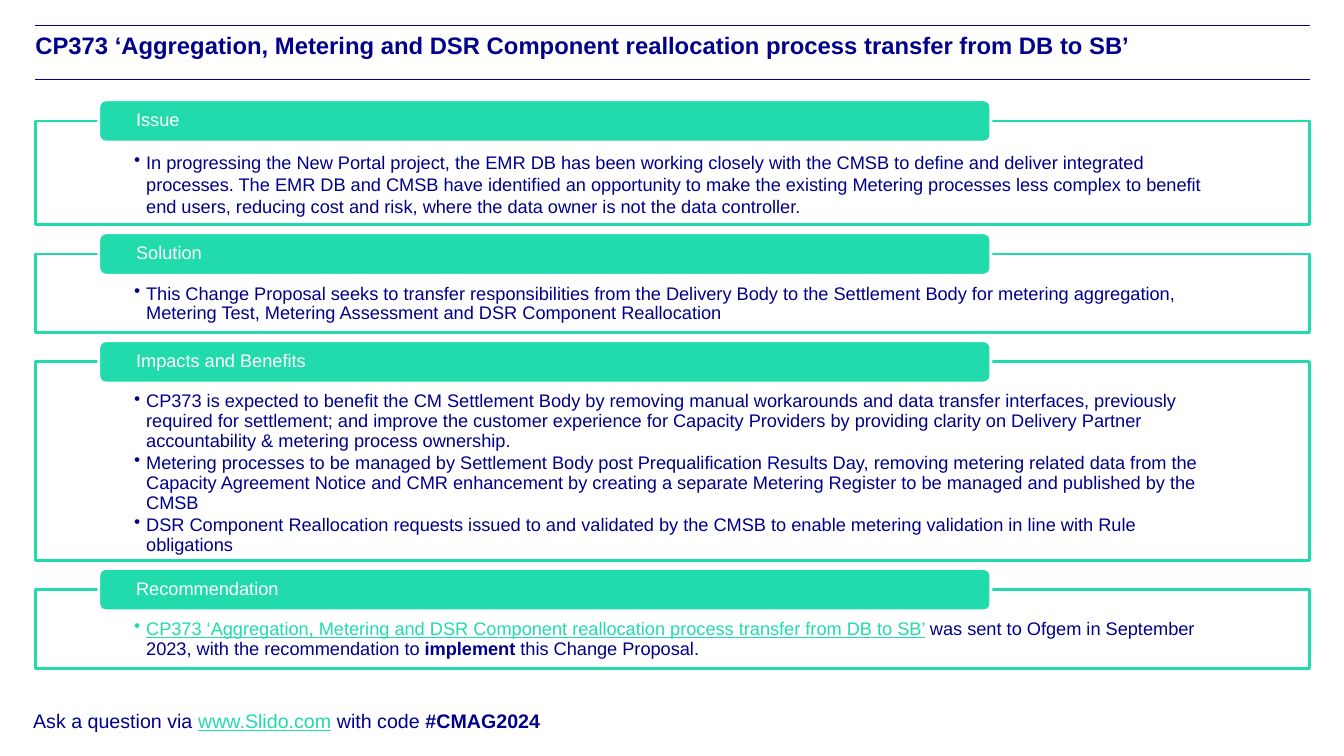
import pptx
import pptx.dml.color
import pptx.enum.shapes
import pptx.enum.text
import pptx.oxml
import pptx.oxml.ns
import pptx.util
from pptx.util import Inches

NAVY, GREEN, WHITE = "00008B", "21DBAD", "FFFFFF"
LEFT, WIDTH = 0.35, 12.64
SECTION_TOP, SECTION_GAP = 1.2, 0.29
CP_TITLE = ("CP373 ‘Aggregation, Metering and DSR Component reallocation "
            "process transfer from DB to SB’")

# Each section: heading, height, line spacing, bullets.
# Each bullet is a list of (text, style) pieces.
SECTIONS = [
    ("Issue", 1.03, 1.0, [
        [("In progressing the New Portal project, the EMR DB has been working closely "
          "with the CMSB to define and deliver integrated processes. The EMR DB and CMSB "
          "have identified an opportunity to make the existing Metering processes less "
          "complex to benefit end users, reducing cost and risk, where the data owner is "
          "not the data controller.", "plain")],
    ]),
    ("Solution", 0.78, 0.9, [
        [("This Change Proposal seeks to transfer responsibilities from the Delivery Body "
          "to the Settlement Body for metering aggregation, Metering Test, Metering "
          "Assessment and DSR Component Reallocation", "plain")],
    ]),
    ("Impacts and Benefits", 1.97, 0.9, [
        [("CP373 is expected to benefit the CM Settlement Body by removing manual "
          "workarounds and data transfer interfaces, previously required for settlement; "
          "and improve the customer experience for Capacity Providers by providing clarity "
          "on Delivery Partner accountability & metering process ownership.", "plain")],
        [("Metering processes to be managed by Settlement Body post Prequalification "
          "Results Day, removing metering related data from the Capacity Agreement Notice "
          "and CMR enhancement by creating a separate Metering Register to be managed and "
          "published by the CMSB", "plain")],
        [("DSR Component Reallocation requests issued to and validated by the CMSB to "
          "enable metering validation in line with Rule obligations", "plain")],
    ]),
    ("Recommendation", 0.78, 0.9, [
        [(CP_TITLE, "link"),
         (" was sent to Ofgem in September 2023, with the recommendation to ", "plain"),
         ("implement", "bold"),
         (" this Change Proposal.", "plain")],
    ]),
]
QUESTION = [("Ask a question via ", "plain"), ("www.Slido.com", "link"),
            (" with code ", "plain"), ("#CMAG2024", "bold")]


def rgb(color):
    return pptx.dml.color.RGBColor.from_string(color)


def format_run(run, size, color, bold=False, underline=False):
    run.font.name = "Arial"
    run.font.size = pptx.util.Pt(size)
    run.font.color.rgb = rgb(color)
    run.font.bold = bold
    run.font.underline = underline


def write_pieces(paragraph, pieces, size):
    for text, style in pieces:
        run = paragraph.add_run()
        run.text = text
        format_run(run, size, GREEN if style == "link" else NAVY,
                   bold=style == "bold", underline=style == "link")


def set_frame(frame, margins, anchor):
    frame.word_wrap = True
    frame.auto_size = pptx.enum.text.MSO_AUTO_SIZE.NONE
    frame.vertical_anchor = anchor
    (frame.margin_left, frame.margin_top,
     frame.margin_right, frame.margin_bottom) = [Inches(m) for m in margins]


def add_panel(slide, preset, box, fill, line):
    panel = slide.shapes.add_shape(preset, *[Inches(v) for v in box])
    panel.shadow.inherit = False
    panel.fill.solid()
    panel.fill.fore_color.rgb = rgb(fill)
    panel.line.color.rgb = rgb(line)
    panel.line.width = pptx.util.Pt(2)
    return panel


def add_bullet(paragraph):
    properties = paragraph._p.get_or_add_pPr()
    properties.set("marL", str(Inches(0.12)))
    properties.set("indent", str(-Inches(0.12)))
    properties.append(pptx.oxml.parse_xml(
        f'<a:buChar {pptx.oxml.ns.nsdecls("a")} char="•"/>'))


def add_header(slide, left, top, width, height):
    # Rules above and below the title
    for y in (top, top + height):
        rule = slide.shapes.add_connector(
            pptx.enum.shapes.MSO_CONNECTOR.STRAIGHT,
            Inches(left), Inches(y), Inches(left + width), Inches(y))
        rule.line.color.rgb = rgb(NAVY)
        rule.line.width = pptx.util.Pt(0.5)
        rule._element.spPr.append(pptx.oxml.parse_xml(
            f'<a:effectLst {pptx.oxml.ns.nsdecls("a")}/>'))
    # Title
    title = slide.shapes.title
    title.left, title.top = Inches(left), Inches(top + 0.05)
    title.width, title.height = Inches(width), Inches(height - 0.05)
    title.text_frame.text = CP_TITLE
    set_frame(title.text_frame, (0, 0, 0, 0), pptx.enum.text.MSO_ANCHOR.TOP)
    heading = title.text_frame.paragraphs[0]
    heading.alignment = pptx.enum.text.PP_ALIGN.LEFT
    format_run(heading.runs[0], 17, NAVY, bold=True)


def add_section(slide, left, top, width, height, heading, spacing, bullets):
    # Outlined box with the bullets
    body = add_panel(slide, pptx.enum.shapes.MSO_SHAPE.RECTANGLE,
                     (left, top, width, height), WHITE, GREEN)
    set_frame(body.text_frame, (0.98, 0.3, 0.98, 0.1), pptx.enum.text.MSO_ANCHOR.TOP)
    for index, pieces in enumerate(bullets):
        bullet = (body.text_frame.add_paragraph() if index
                  else body.text_frame.paragraphs[0])
        add_bullet(bullet)
        bullet.alignment = pptx.enum.text.PP_ALIGN.LEFT
        bullet.line_spacing = spacing
        bullet.space_after = pptx.util.Pt(2)
        write_pieces(bullet, pieces, 13)
    # Heading tab across the top edge
    tab = add_panel(slide, pptx.enum.shapes.MSO_SHAPE.ROUNDED_RECTANGLE,
                    (left + 0.63, top - 0.21, 0.7 * width, 0.42), GREEN, WHITE)
    tab.text_frame.text = heading
    set_frame(tab.text_frame, (0.35, 0, 0.35, 0), pptx.enum.text.MSO_ANCHOR.MIDDLE)
    label = tab.text_frame.paragraphs[0]
    label.alignment = pptx.enum.text.PP_ALIGN.LEFT
    label.line_spacing = 0.9
    format_run(label.runs[0], 13, WHITE)


def add_question(slide, left, top, width, height):
    question = slide.shapes.add_textbox(*[Inches(v) for v in (left, top, width, height)])
    set_frame(question.text_frame, (0.1, 0.05, 0.1, 0.05), pptx.enum.text.MSO_ANCHOR.TOP)
    write_pieces(question.text_frame.paragraphs[0], QUESTION, 14)


def main():
    deck = pptx.Presentation()
    deck.slide_width, deck.slide_height = Inches(13.33), Inches(7.5)
    slide = deck.slides.add_slide(deck.slide_layouts.get_by_name("Title Only"))

    add_header(slide, LEFT, 0.25, WIDTH, 0.54)
    top = SECTION_TOP
    for heading, height, spacing, bullets in SECTIONS:
        add_section(slide, LEFT, top, WIDTH, height, heading, spacing, bullets)
        top += height + SECTION_GAP
    add_question(slide, 0.23, 6.98, 5.61, 0.34)

    deck.save("out.pptx")


if __name__ == "__main__":
    main()
